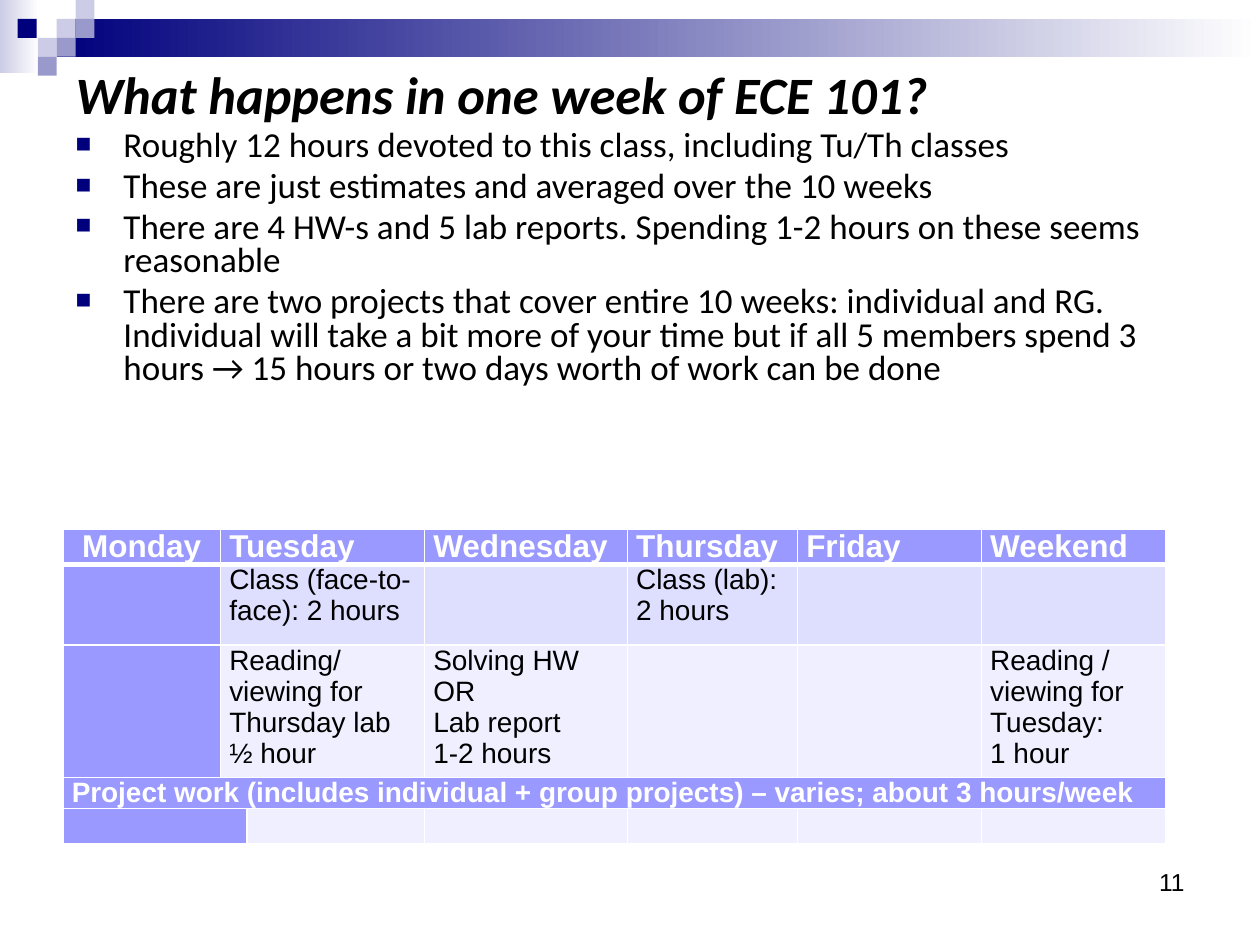
from lxml import etree
from pptx import Presentation
from pptx.dml.color import RGBColor
from pptx.enum.shapes import MSO_SHAPE
from pptx.enum.text import MSO_ANCHOR, MSO_AUTO_SIZE, PP_ALIGN
from pptx.oxml.ns import qn
from pptx.util import Inches, Pt

RECTANGLE = MSO_SHAPE.RECTANGLE
LEFT, CENTER, RIGHT = PP_ALIGN.LEFT, PP_ALIGN.CENTER, PP_ALIGN.RIGHT
TOP = MSO_ANCHOR.TOP
NO_AUTOFIT = MSO_AUTO_SIZE.NONE
TITLE_AND_CONTENT = 1

BLACK = RGBColor(0x00, 0x00, 0x00)
WHITE = RGBColor(0xFF, 0xFF, 0xFF)
NAVY = RGBColor(0x00, 0x00, 0x7D)
PALE_BLUE = RGBColor(0xCC, 0xCC, 0xE6)
MID_BLUE = RGBColor(0x99, 0x99, 0xCC)
HEADER_FILL = RGBColor(0x99, 0x99, 0xFF)
CLASS_FILL = RGBColor(0xDE, 0xDE, 0xFF)
WORK_FILL = RGBColor(0xEF, 0xEF, 0xFF)

TITLE = "What happens in one week of ECE 101?"
BULLETS = [
    "Roughly 12 hours devoted to this class, including Tu/Th classes",
    "These are just estimates and averaged over the 10 weeks",
    "There are 4 HW-s and 5 lab reports. Spending 1-2 hours on these seems reasonable",
    "There are two projects that cover entire 10 weeks: individual and RG. "
    "Individual will take a bit more of your time but if all 5 members spend "
    "3 hours → 15 hours or two days worth of work can be done",
]

SQUARE = 0.15
SQUARES = [
    (0.45, 0.15, PALE_BLUE), (0.6, 0, PALE_BLUE), (0.6, 0.15, MID_BLUE),
    (0.3, 0.3, PALE_BLUE), (0.14, 0.15, NAVY), (0.45, 0.3, MID_BLUE),
    (0.3, 0.45, MID_BLUE),
]

COLUMN_WIDTHS = [1.25, 0.21, 1.41, 1.61, 1.35, 1.46, 1.46]
ROW_HEIGHTS = [0.28, 0.64, 1.05, 0.24, 0.28]
PROJECT_ROW = 3
ROW_FILLS = [HEADER_FILL, CLASS_FILL, WORK_FILL, HEADER_FILL, WORK_FILL]
# First and last column of the merged cells, by row
MERGES = [(1, 2), (1, 2), (1, 2), (0, 6), (0, 1)]
SCHEDULE = [
    ["Monday", "Tuesday", "", "Wednesday", "Thursday", "Friday", "Weekend"],
    ["", "Class (face-to-face): 2 hours", "", "", "Class (lab): 2 hours", "", ""],
    ["", "Reading/ viewing for Thursday lab\n½ hour", "",
     "Solving HW\nOR\nLab report\n1-2 hours", "", "",
     "Reading / viewing for Tuesday:\n1 hour"],
    ["Project work (includes individual + group projects) – varies; "
     "about 3 hours/week"] + [""] * 6,
    [""] * 7,
]


def set_font(paragraph, name, size, color=BLACK, bold=False, italic=False):
    font = paragraph.font
    font.name, font.size = name, Pt(size)
    font.bold, font.italic = bold, italic
    font.color.rgb = color


def place(shape, left, top, width, height):
    shape.left, shape.top = Inches(left), Inches(top)
    shape.width, shape.height = Inches(width), Inches(height)


def add_rectangle(slide, left, top, width, height, color, fade=False):
    """Add a borderless rectangle, which fades to white on the right if asked."""
    shape = slide.shapes.add_shape(
        RECTANGLE, Inches(left), Inches(top), Inches(width), Inches(height))
    shape.shadow.inherit = False
    shape.line.fill.background()
    if fade:
        shape.fill.gradient()
        shape.fill.gradient_angle = 0
        for stop, stop_color in zip(shape.fill.gradient_stops, (color, WHITE)):
            stop.color.rgb = stop_color
    else:
        shape.fill.solid()
        shape.fill.fore_color.rgb = color


def add_banner(slide):
    add_rectangle(slide, 0, 0, 0.31, 0.58, PALE_BLUE, fade=True)
    add_rectangle(slide, 0.45, 0.15, 9.55, 0.3, NAVY, fade=True)
    for left, top, color in SQUARES:
        add_rectangle(slide, left, top, SQUARE, SQUARE, color)


def fill_title(slide):
    title = slide.shapes.title
    place(title, 0.5, 0.5, 9, 0.5)
    frame = title.text_frame
    frame.text = TITLE
    frame.auto_size = NO_AUTOFIT
    frame.vertical_anchor = TOP
    paragraph = frame.paragraphs[0]
    paragraph.alignment = LEFT
    paragraph.line_spacing = 0.9
    set_font(paragraph, "Calibri", 30, bold=True, italic=True)


def set_square_bullet(paragraph):
    properties = paragraph._p.get_or_add_pPr()
    properties.set("marL", str(Inches(0.38)))
    properties.set("indent", str(Inches(-0.38)))
    color = etree.SubElement(properties, qn("a:buClr"))
    etree.SubElement(color, qn("a:srgbClr"), val=str(NAVY))
    etree.SubElement(properties, qn("a:buSzPct"), val="75000")
    etree.SubElement(properties, qn("a:buChar"), char="■")


def fill_bullets(slide):
    body = slide.placeholders[1]
    place(body, 0.5, 0.99, 9, 3.1)
    frame = body.text_frame
    frame.text = "\n".join(BULLETS)
    frame.auto_size = NO_AUTOFIT
    for paragraph in frame.paragraphs:
        set_square_bullet(paragraph)
        paragraph.line_spacing = 0.8
        paragraph.space_before = Pt(4)
        set_font(paragraph, "Calibri", 20)


def set_borders(cell, row):
    """Draw white borders, with a heavier rule between header and body."""
    properties = cell._tc.get_or_add_tcPr()
    widths = {"L": 1, "R": 1, "T": 3 if row == 1 else 1, "B": 3 if row == 0 else 1}
    for side, width in widths.items():
        line = etree.SubElement(properties, qn(f"a:ln{side}"), w=str(Pt(width)))
        fill = etree.SubElement(line, qn("a:solidFill"))
        etree.SubElement(fill, qn("a:srgbClr"), val=str(WHITE))


def format_cell(cell, row, column):
    heading = row in (0, PROJECT_ROW)
    cell.text = SCHEDULE[row][column]
    cell.margin_left = cell.margin_right = Inches(0.07)
    cell.margin_top = cell.margin_bottom = 0
    set_borders(cell, row)
    cell.fill.solid()
    cell.fill.fore_color.rgb = HEADER_FILL if column == 0 else ROW_FILLS[row]
    for paragraph in cell.text_frame.paragraphs:
        set_font(paragraph, "Arial", 18 if row == 0 else 16,
                 WHITE if heading else BLACK, bold=heading)


def add_schedule(slide):
    table = slide.shapes.add_table(
        len(ROW_HEIGHTS), len(COLUMN_WIDTHS), Inches(0.5), Inches(4.2),
        Inches(sum(COLUMN_WIDTHS)), Inches(sum(ROW_HEIGHTS))).table
    table.horz_banding = False
    for column, width in zip(table.columns, COLUMN_WIDTHS):
        column.width = Inches(width)
    for row_index, (row, height) in enumerate(zip(table.rows, ROW_HEIGHTS)):
        row.height = Inches(height)
        for column_index, cell in enumerate(row.cells):
            format_cell(cell, row_index, column_index)
        first, last = MERGES[row_index]
        table.cell(row_index, first).merge(table.cell(row_index, last))
    table.cell(0, 0).text_frame.paragraphs[0].alignment = CENTER


def add_page_number(slide, number):
    box = slide.shapes.add_textbox(
        Inches(7.17), Inches(6.83), Inches(2.33), Inches(0.52))
    box.text_frame.word_wrap = True
    box.text_frame.text = number
    paragraph = box.text_frame.paragraphs[0]
    paragraph.alignment = RIGHT
    set_font(paragraph, "Arial", 14)


def main():
    presentation = Presentation()
    presentation.slide_width, presentation.slide_height = Inches(10), Inches(7.5)
    slide = presentation.slides.add_slide(
        presentation.slide_layouts[TITLE_AND_CONTENT])
    add_banner(slide)
    fill_title(slide)
    fill_bullets(slide)
    add_schedule(slide)
    add_page_number(slide, "11")
    presentation.save("out.pptx")


if __name__ == "__main__":
    main()
